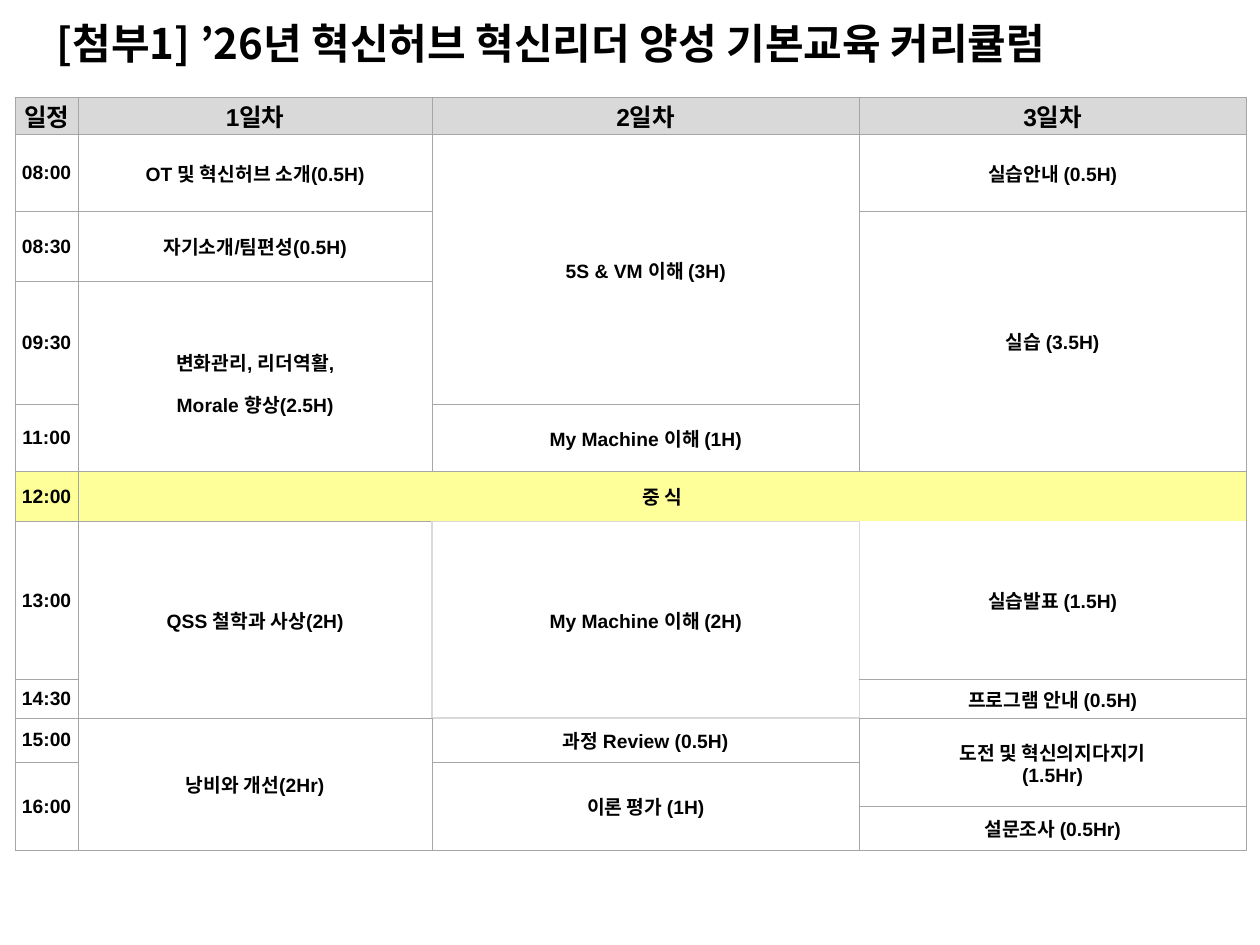
"""Build the three-day innovation leader curriculum slide."""
from dataclasses import dataclass, field

import pptx
import pptx.dml.color
import pptx.enum.text
import pptx.oxml
import pptx.oxml.ns
import pptx.util

Inches = pptx.util.Inches


@dataclass(frozen=True)
class Theme:
    """Colours, fonts and type sizes of the slide."""
    ink: str = "000000"
    paper: str = "FFFFFF"
    header: str = "D9D9D9"
    lunch: str = "FFFF99"
    latin: str = "Arial"
    korean: str = "Noto Sans CJK KR"
    title_size: int = 24
    header_size: int = 14
    body_size: int = 11


THEME = Theme()


@dataclass(frozen=True)
class Edge:
    """Colour and width of one cell border."""
    color: str
    points: float


GREY = Edge("A6A6A6", 0.5)
PALE = Edge("D9D9D9", 1)
WHITE = Edge("FFFFFF", 1)


@dataclass(frozen=True)
class Block:
    """One timetable cell, with its span and any special borders."""
    row: int
    column: int
    text: str
    rows: int = 1
    columns: int = 1
    fill: str = THEME.paper
    size: int = THEME.body_size
    font: str = THEME.latin
    spacing: float = 1.0
    edges: dict[str, Edge] = field(default_factory=dict)


COLUMN_WIDTHS = [0.5, 2.81, 3.39, 3.07]
ROW_HEIGHTS = [0.3, 0.61, 0.55, 0.98, 0.53, 0.4, 1.25, 0.31, 0.35, 0.35, 0.35]
HEADINGS = ["일정", "1일차", "2일차", "3일차"]
TIMES = ["08:00", "08:30", "09:30", "11:00", "12:00", "13:00", "14:30", "15:00", "16:00"]
LUNCH_ROW = 5
SESSIONS = [
    Block(1, 1, "OT 및 혁신허브 소개(0.5H)"),
    Block(2, 1, "자기소개/팀편성(0.5H)"),
    Block(3, 1, "변화관리, 리더역활,\nMorale 향상(2.5H)", rows=2, spacing=1.5),
    Block(6, 1, "QSS 철학과 사상(2H)", rows=2, edges={"R": PALE}),
    Block(8, 1, "낭비와 개선(2Hr)", rows=3),
    Block(1, 2, "5S & VM 이해 (3H)", rows=3),
    Block(4, 2, "My Machine 이해 (1H)"),
    Block(6, 2, "My Machine 이해 (2H)", rows=2, edges=dict.fromkeys("LRTB", PALE)),
    Block(8, 2, "과정 Review (0.5H)", edges={"T": PALE}),
    Block(9, 2, "이론 평가 (1H)", rows=2),
    Block(1, 3, "실습안내 (0.5H)"),
    Block(2, 3, "실습 (3.5H)", rows=3),
    Block(6, 3, "실습발표 (1.5H)", edges={"L": PALE, "T": WHITE}),
    Block(7, 3, "프로그램 안내 (0.5H)", edges={"L": PALE}),
    Block(8, 3, "도전 및 혁신의지다지기\v(1.5Hr)", rows=2),
    Block(10, 3, "설문조사 (0.5Hr)"),
    Block(LUNCH_ROW, 1, "중 식", columns=3, fill=THEME.lunch),
]


def format_span(span, size: int, font: str) -> None:
    """Set the bold type of a run."""
    span.font.size = pptx.util.Pt(size)
    span.font.bold = True
    span.font.color.rgb = pptx.dml.color.RGBColor.from_string(THEME.ink)
    span.font.name = font
    east_asian = pptx.oxml.parse_xml(
        f'<a:ea {pptx.oxml.ns.nsdecls("a")} typeface="{THEME.korean}"/>')
    span.font._element.append(east_asian)


def style_cell(cell, block: Block) -> None:
    """Give a cell its borders, fill and margins."""
    properties = cell._tc.get_or_add_tcPr()
    for side in "LRTB":
        edge = block.edges.get(side, GREY)
        properties.append(pptx.oxml.parse_xml(
            f'<a:ln{side} {pptx.oxml.ns.nsdecls("a")} w="{pptx.util.Pt(edge.points)}">'
            f'<a:solidFill><a:srgbClr val="{edge.color}"/></a:solidFill></a:ln{side}>'))
    cell.fill.solid()
    cell.fill.fore_color.rgb = pptx.dml.color.RGBColor.from_string(block.fill)
    cell.margin_left = cell.margin_right = cell.margin_top = cell.margin_bottom = 0
    cell.vertical_anchor = pptx.enum.text.MSO_ANCHOR.MIDDLE


def draw_block(table, block: Block) -> None:
    """Fill one timetable block and merge its cells."""
    last_row = block.row + block.rows - 1
    last_column = block.column + block.columns - 1
    for row in range(block.row, last_row + 1):
        for column in range(block.column, last_column + 1):
            style_cell(table.cell(row, column), block)
    cell = table.cell(block.row, block.column)
    if block.rows * block.columns > 1:
        cell.merge(table.cell(last_row, last_column))
    cell.text_frame.text = block.text
    for para in cell.text_frame.paragraphs:
        para.alignment = pptx.enum.text.PP_ALIGN.CENTER
        para.line_spacing = block.spacing
        for span in para.runs:
            format_span(span, block.size, block.font)


def draw_title(page, text: str) -> None:
    """Place and format the slide title."""
    box = page.shapes.title
    box.left, box.top, box.width, box.height = map(Inches, (0.35, 0.09, 9.65, 0.5))
    frame = box.text_frame
    frame.text = text
    frame.word_wrap = True
    frame.auto_size = pptx.enum.text.MSO_AUTO_SIZE.SHAPE_TO_FIT_TEXT
    frame.vertical_anchor = pptx.enum.text.MSO_ANCHOR.MIDDLE
    para = frame.paragraphs[0]
    para.alignment = pptx.enum.text.PP_ALIGN.LEFT
    format_span(para.runs[0], THEME.title_size, THEME.korean)


def draw_timetable(page) -> None:
    """Add the timetable with its headings, times and sessions."""
    table = page.shapes.add_table(
        len(ROW_HEIGHTS), len(COLUMN_WIDTHS), Inches(0.12), Inches(0.77),
        Inches(sum(COLUMN_WIDTHS)), Inches(sum(ROW_HEIGHTS))).table
    table.first_row = table.horz_banding = False
    for column, width in zip(table.columns, COLUMN_WIDTHS):
        column.width = Inches(width)
    for row, height in zip(table.rows, ROW_HEIGHTS):
        row.height = Inches(height)
    headings = [
        Block(0, column, text, fill=THEME.header, size=THEME.header_size,
              font=THEME.latin if column else THEME.korean)
        for column, text in enumerate(HEADINGS)]
    times = [
        Block(row, 0, text, rows=2 if row == len(TIMES) else 1,
              fill=THEME.lunch if row == LUNCH_ROW else THEME.paper)
        for row, text in enumerate(TIMES, start=1)]
    for block in headings + times + SESSIONS:
        draw_block(table, block)


def main() -> None:
    """Build and save the deck."""
    deck = pptx.Presentation()
    deck.slide_width, deck.slide_height = Inches(10), Inches(7.5)
    page = deck.slides.add_slide(deck.slide_layouts.get_by_name("Title Only"))
    draw_title(page, "[첨부1] ’26년 혁신허브 혁신리더 양성 기본교육 커리큘럼")
    draw_timetable(page)
    deck.save("out.pptx")


if __name__ == "__main__":
    main()
